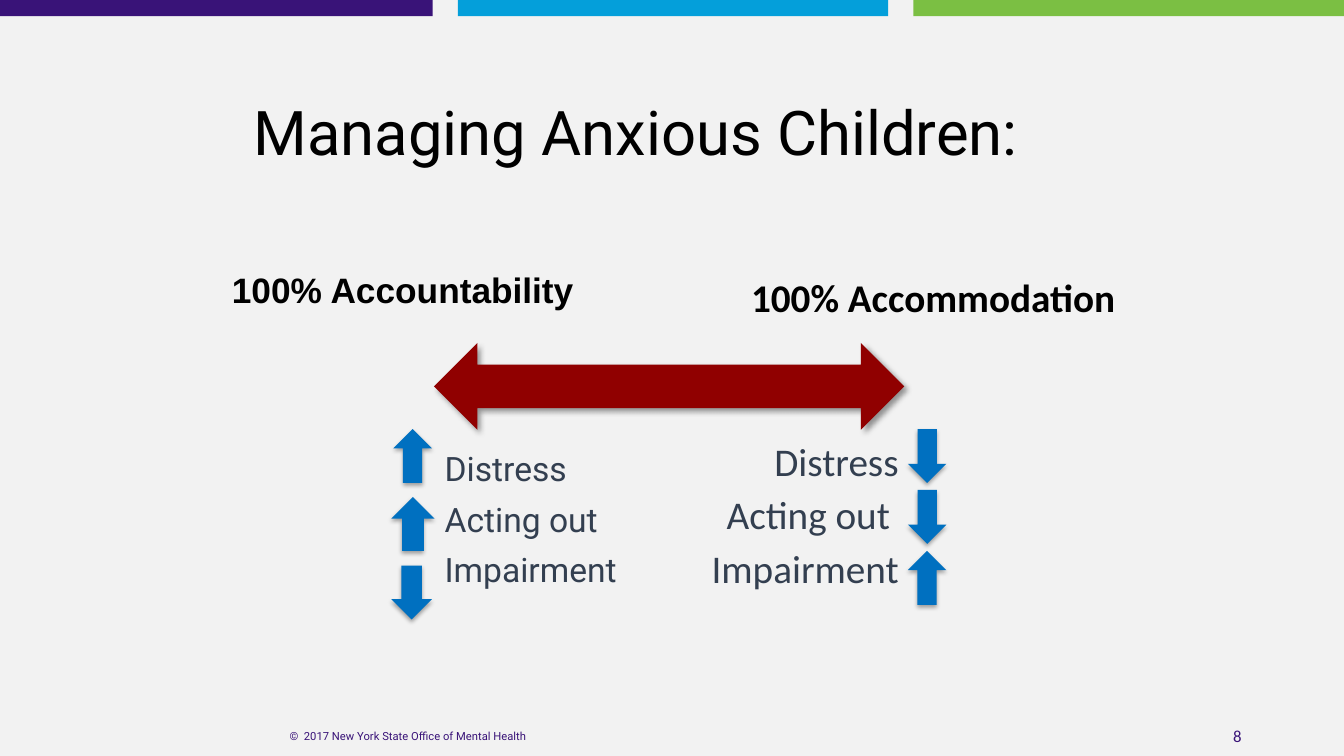
import lxml.etree
import pptx
import pptx.dml.color
import pptx.enum.shapes
import pptx.enum.text
import pptx.oxml.ns
import pptx.util

Pt = pptx.util.Pt
SHAPE = pptx.enum.shapes.MSO_SHAPE
ALIGN = pptx.enum.text.PP_ALIGN
ANCHOR = pptx.enum.text.MSO_ANCHOR
PURPLE, SLATE, BLACK = "391378", "333F50", "000000"
ARROW_BLUE = "0070C0"


def rgb(color):
    return pptx.dml.color.RGBColor.from_string(color)


def add_block(page, kind, place, color):
    block = page.shapes.add_shape(kind, *[Pt(length) for length in place])
    block.shadow.inherit = False
    block.fill.solid()
    block.fill.fore_color.rgb = rgb(color)
    block.line.fill.background()
    return block


def add_shadow(shape, opacity, blur, distance, angle):
    """Fill the empty effect list; opacity in percent, angle in degrees."""
    qn = pptx.oxml.ns.qn
    effects = shape._element.spPr.find(qn("a:effectLst"))
    shadow = lxml.etree.SubElement(
        effects, qn("a:outerShdw"), blurRad=str(Pt(blur)), dist=str(Pt(distance)),
        dir=str(angle * 60000), rotWithShape="0")
    shade = lxml.etree.SubElement(shadow, qn("a:srgbClr"), val=BLACK)
    lxml.etree.SubElement(shade, qn("a:alpha"), val=str(opacity * 1000))


def add_trend_arrow(page, place, rises):
    arrow = add_block(page, SHAPE.UP_ARROW, place, ARROW_BLUE)
    arrow.rotation = 0 if rises else 180
    add_shadow(arrow, 35, 3.1, 1.8, 90)


def add_text(page, place, lines, font, size, color, align=ALIGN.LEFT,
             anchor=ANCHOR.TOP, bold=False, line_spacing=1.0, gap=0, top_inset=3.6):
    box = page.shapes.add_textbox(*[Pt(length) for length in place])
    frame = box.text_frame
    frame.word_wrap = True
    frame.vertical_anchor = anchor
    frame.margin_top = Pt(top_inset)
    frame.text = "\n".join(lines)
    for index, para in enumerate(frame.paragraphs):
        para.alignment = align
        para.line_spacing = line_spacing
        para.space_before = Pt(gap if index else 0)
        for span in para.runs:
            span.font.name = font
            span.font.size = Pt(size)
            span.font.bold = bold
            span.font.color.rgb = rgb(color)


def add_frame(page):
    """Background, colour strips, footer and page number."""
    page.background.fill.solid()
    page.background.fill.fore_color.rgb = rgb("F2F2F2")
    for left, width, color in ((0, 309, PURPLE), (327, 307.5, "049FDA"),
                               (652.5, 307.5, "7BBF43")):
        add_block(page, SHAPE.RECTANGLE, (left, 0, width, 11.5), color)
    add_text(page, (678, 511, 216, 29), ["8"], "Calibri", 12, PURPLE,
             ALIGN.RIGHT, ANCHOR.MIDDLE)
    add_text(page, (130.5, 511, 322, 29),
             ["©  2017 New York State Office of Mental Health"],
             "Roboto", 8, PURPLE, ALIGN.CENTER, ANCHOR.MIDDLE)


def main():
    deck = pptx.Presentation()
    deck.slide_width, deck.slide_height = Pt(960), Pt(540)
    page = deck.slides.add_slide(deck.slide_layouts[6])
    add_frame(page)

    add_text(page, (137.5, 63.5, 645, 152.5), ["Managing Anxious Children: "],
             "Roboto", 44, BLACK, ALIGN.CENTER)
    add_text(page, (158.5, 191.5, 355, 96.5), ["100% Accountability"],
             "Arial", 25.2, BLACK, bold=True, line_spacing=0.9)
    add_text(page, (489.5, 195, 314, 73), ["100% Accommodation"],
             "Calibri", 28, BLACK, ALIGN.RIGHT, bold=True, top_inset=0)

    scale_arrow = add_block(page, SHAPE.LEFT_RIGHT_ARROW, (310, 245, 336, 62), "900000")
    add_shadow(scale_arrow, 40, 4, 3, 45)

    add_text(page, (310.5, 320, 168, 129.5), ["Distress", "Acting out", "Impairment"],
             "Roboto", 24, SLATE, line_spacing=0.9, gap=10)
    add_text(page, (478, 308.5, 171, 133), ["Distress", "Acting out ", "Impairment"],
             "Calibri", 28, SLATE, ALIGN.RIGHT, gap=4.8)

    for left, top, width, rises in (
            (281, 306.5, 27.5, True), (279.5, 355, 31, True), (279.5, 404, 29, False),
            (648.5, 306.5, 27.5, False), (648.5, 350, 27.5, False),
            (648.5, 393.5, 27.5, True)):
        add_trend_arrow(page, (left, top, width, 38.5), rises)

    deck.save("out.pptx")


if __name__ == "__main__":
    main()
